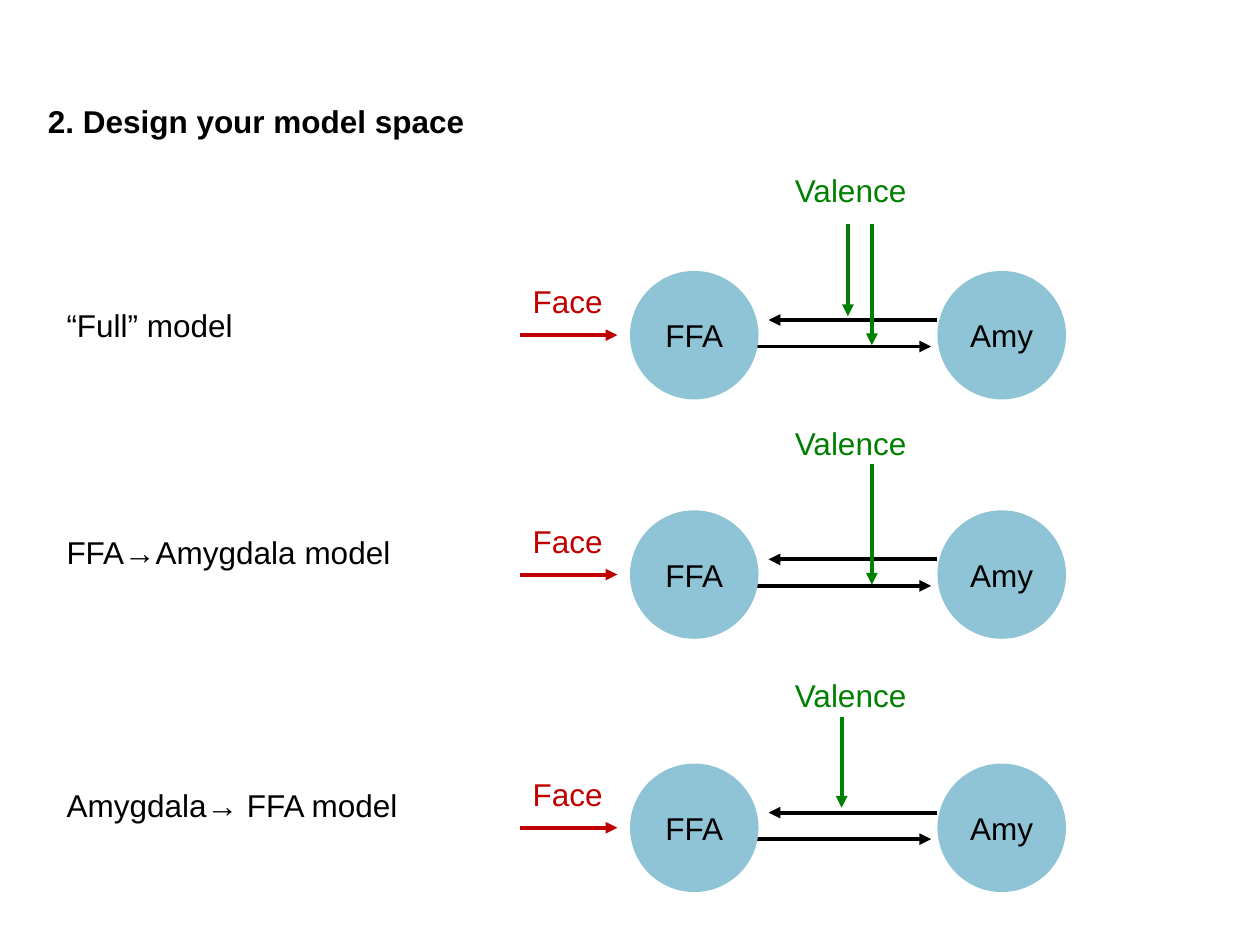
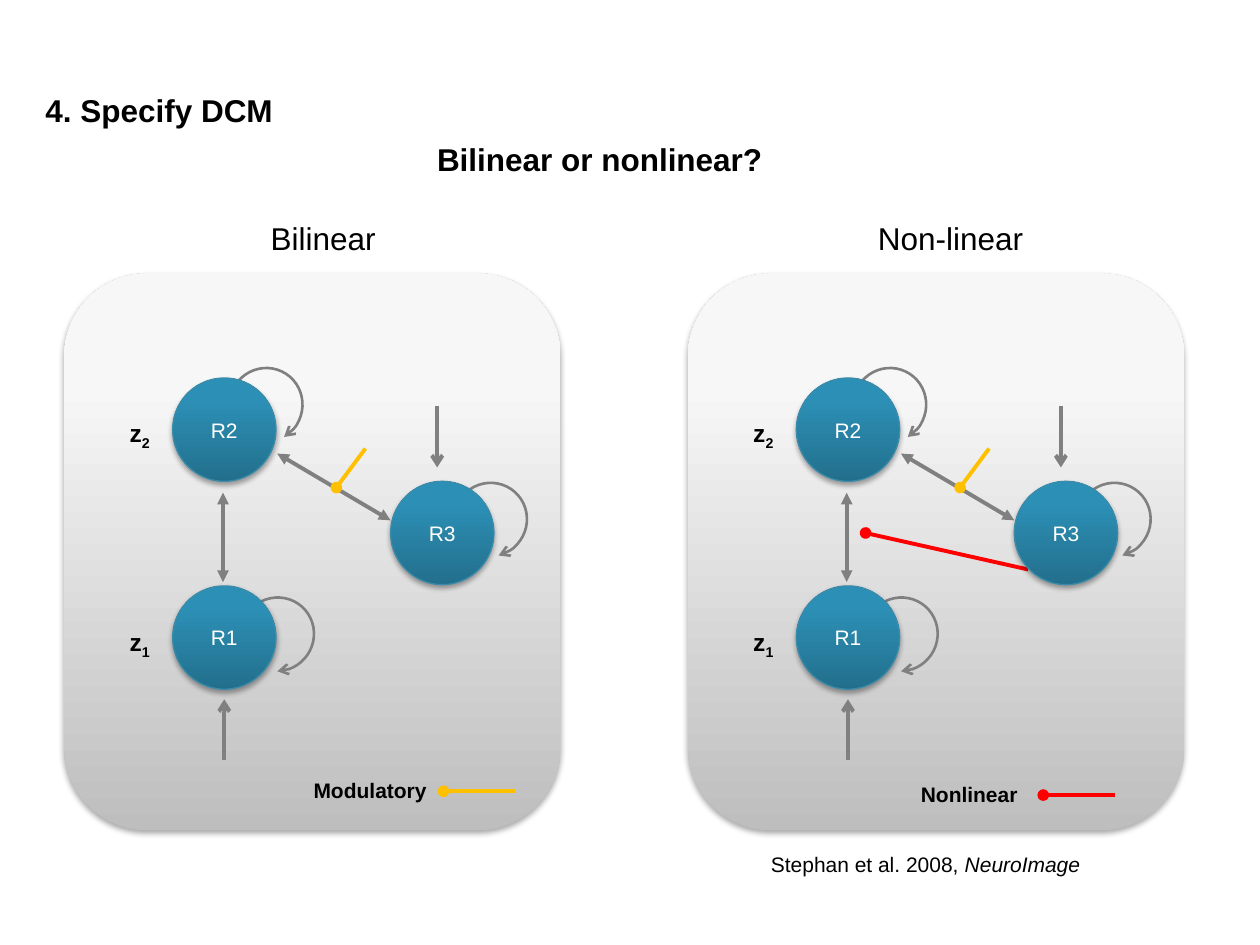
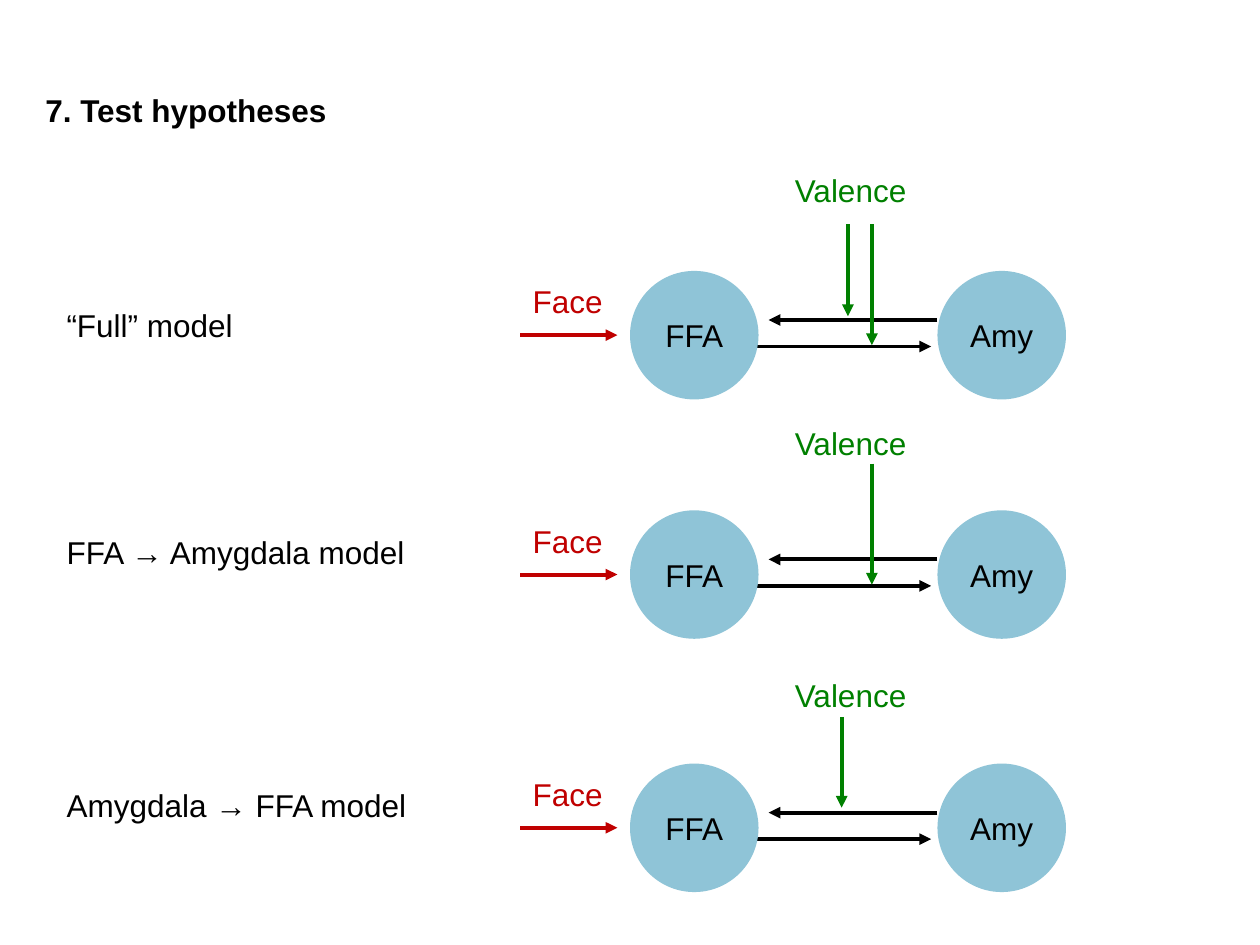
from copy import deepcopy
from dataclasses import dataclass

from pptx import Presentation
from pptx.dml.color import RGBColor
from pptx.enum.shapes import MSO_CONNECTOR, MSO_SHAPE
from pptx.enum.text import MSO_ANCHOR, MSO_AUTO_SIZE, PP_ALIGN
from pptx.oxml import parse_xml
from pptx.oxml.ns import nsdecls, qn
from pptx.util import Inches, Pt

STRAIGHT = MSO_CONNECTOR.STRAIGHT
OVAL, ARC, ROUND = MSO_SHAPE.OVAL, MSO_SHAPE.ARC, MSO_SHAPE.ROUNDED_RECTANGLE
TOP, MIDDLE = MSO_ANCHOR.TOP, MSO_ANCHOR.MIDDLE
LEFT, CENTER = PP_ALIGN.LEFT, PP_ALIGN.CENTER
FIT = MSO_AUTO_SIZE.SHAPE_TO_FIT_TEXT


@dataclass(frozen=True)
class Theme:
    font: str = "Arial"
    head: int = 18
    mid: int = 14
    small: int = 12
    thick: float = 2.25
    thin: float = 1.5
    edge: float = 0.75
    black: str = "000000"
    white: str = "FFFFFF"
    red: str = "C00000"
    green: str = "008000"
    pale: str = "8FC4D7"
    gray: str = "808080"
    gold: str = "FFC000"
    bright: str = "FF0000"
    rim: str = "3A8BAA"
    ball: tuple = ("226F8C", "2C90B6", "2A92B9")
    card: tuple = ("BEBEBE", "F7F7F7", "F8F8F8")


T = Theme()
HIGH = {T.head: 0.4, T.mid: 0.34, T.small: 0.3}


def color(code):
    return RGBColor.from_string(code)


def add_run(para, words, size, ink=T.black, bold=False, italic=False, base=0):
    run = para.add_run()
    run.text = words
    font = run.font
    font.name, font.size = T.font, Pt(size)
    font.bold, font.italic = bold, italic
    font.color.rgb = color(ink)
    if base:
        run._r.get_or_add_rPr().set("baseline", str(base * 1000))


def add_text(area, x, y, wide, words, size=T.head, wrap=False, **style):
    box = area.add_textbox(Inches(x), Inches(y), Inches(wide), Inches(HIGH[size]))
    frame = box.text_frame
    frame.word_wrap = wrap
    frame.auto_size = FIT
    para = frame.paragraphs[0]
    add_run(para, words, size, **style)
    return para


def add_title(slide, x, y, wide, words):
    title = slide.shapes.title
    title.left, title.top = Inches(x), Inches(y)
    title.width, title.height = Inches(wide), Inches(HIGH[T.head])
    frame = title.text_frame
    frame.vertical_anchor = TOP
    frame.auto_size = FIT
    para = frame.paragraphs[0]
    para.alignment = LEFT
    add_run(para, words, T.head, bold=True)


def set_line(shape, ink, width, head=None, tail=None):
    shape.line.width = Pt(width)
    shape.line.color.rgb = color(ink)
    edge = shape._element.spPr.find(qn("a:ln"))
    for tag, kind in (("headEnd", head), ("tailEnd", tail)):
        if kind:
            edge.append(parse_xml(f'<a:{tag} {nsdecls("a")} type="{kind}"/>'))


def add_line(area, start, end, ink, head=None, tail="triangle"):
    line = area.add_connector(STRAIGHT, *map(Inches, (*start, *end)))
    set_line(line, ink, T.thick, head, tail)
    line._element.spPr.append(parse_xml(f'<a:effectLst {nsdecls("a")}/>'))


def add_form(area, kind, x, y, wide, high):
    shape = area.add_shape(kind, *map(Inches, (x, y, wide, high)))
    shape.shadow.inherit = False
    shape.line.fill.background()
    return shape


def add_label(shape, words, size, ink):
    frame = shape.text_frame
    frame.vertical_anchor = MIDDLE
    para = frame.paragraphs[0]
    para.alignment = CENTER
    add_run(para, words, size, ink)


def set_glow(shape, tones):
    fill = shape.fill
    fill.gradient()
    fill.gradient_angle = 90
    stops = shape._element.spPr.find(".//" + qn("a:gsLst"))
    stops.append(deepcopy(stops[-1]))
    for stop, tone, place in zip(fill.gradient_stops, tones, (0, 0.8, 1)):
        stop.color.rgb = color(tone)
        stop.position = place
    shape._element.spPr.find(qn("a:effectLst")).append(parse_xml(
        f'<a:outerShdw {nsdecls("a")} blurRad="{Pt(3.1)}" dist="{Pt(1.8)}" '
        'dir="5400000" rotWithShape="0"><a:srgbClr val="000000">'
        '<a:alpha val="35000"/></a:srgbClr></a:outerShdw>'))


def add_model(area, x, y, name, wide, drop, lift, inputs):
    add_text(area, x, y + drop, wide, name)
    add_line(area, (x + 5.44, y + 0.6), (x + 6.96, y + 0.6), T.black)
    for left, label in ((4.57, "FFA"), (7.01, "Amy")):
        node = add_form(area, OVAL, x + left, y, 1.02, 1.02)
        node.fill.solid()
        node.fill.fore_color.rgb = color(T.pale)
        add_label(node, label, T.head, T.black)
    add_line(area, (x + 3.7, y + 0.51), (x + 4.47, y + 0.51), T.red)
    add_text(area, x + 3.7, y + 0.04, 0.76, "Face", ink=T.red)
    add_text(area, x + 5.78, y - lift, 1.09, "Valence", ink=T.green)
    add_line(area, (x + 7.01, y + 0.39), (x + 5.67, y + 0.39), T.black)
    for left, end in inputs:
        add_line(area, (x + left, y - 0.37), (x + left, y + end), T.green)


def add_space(slide, names):
    rows = (
        (2.15, 0.23, 0.84, ((6.3, 0.36), (6.49, 0.59))),
        (4.05, 0.13, 0.73, ((6.49, 0.59),)),
        (6.06, 0.13, 0.74, ((6.25, 0.35),)),
    )
    for (y, drop, lift, inputs), (name, wide) in zip(rows, names):
        add_model(slide.shapes, 0.43, y, name, wide, drop, lift, inputs)


def add_ball(area, x, y, name):
    ball = add_form(area, OVAL, x, y, 0.82, 0.82)
    set_glow(ball, T.ball)
    set_line(ball, T.rim, T.edge)
    add_label(ball, name, T.small, T.white)


def add_loop(area, x, y, turn, end):
    loop = add_form(area, ARC, x, y, 0.58, 0.59)
    loop.rotation = turn
    loop.adjustments[0], loop.adjustments[1] = 116.19, end
    loop.fill.background()
    set_line(loop, T.gray, T.thin, tail="arrow")


def add_net(area, x, y, name, key, cross=False):
    def at(left, top):
        return x + left, y + top

    card = add_form(area, ROUND, x, y, 3.94, 4.42)
    set_glow(card, T.card)
    left, wide = name[1:]
    add_text(area, *at(left, -0.48), wide, name[0])
    for left, top, turn, end in (
            (1.31, 0.75, 25.3, 21), (1.4, 2.57, 41.7, 28.8), (3.09, 1.66, 41.7, 21)):
        add_loop(area, *at(left, top), turn, end)
    for start, end in (((1.26, 2.45), (1.26, 1.74)), ((1.69, 1.43), (2.59, 1.96))):
        add_line(area, at(*start), at(*end), T.gray, head="triangle")
    for start, end in (((1.27, 3.86), (1.27, 3.38)), ((2.96, 1.05), (2.96, 1.54))):
        add_line(area, at(*start), at(*end), T.gray, tail="arrow")
    for mark, top in (("1", 2.76), ("2", 1.1)):
        para = add_text(area, *at(0.42, top), 0.37, "z", T.mid, bold=True)
        add_run(para, mark, T.mid, bold=True, base=-25)
    add_line(area, at(2.39, 1.39), at(2.16, 1.7), T.gold, tail="oval")
    if cross:
        add_line(area, at(2.7, 2.35), at(1.41, 2.06), T.bright, tail="oval")
    for label, left, top in (("R1", 0.86, 2.48), ("R2", 0.86, 0.83), ("R3", 2.59, 1.65)):
        add_ball(area, *at(left, top), label)
    label, left, top, wide, end, ink = key
    add_text(area, *at(left, top), wide, label, T.small, bold=True)
    add_line(area, at(end + 0.57, top + 0.16), at(end, top + 0.16), ink, tail="oval")


def add_choice(slide):
    area = slide.shapes
    add_text(area, 3.37, 1.06, 2.81, "Bilinear or nonlinear?", bold=True)
    add_net(area, 0.51, 2.17, ("Bilinear", 1.54, 1.04),
            ("Modulatory", 1.88, 3.95, 1.11, 3.01, T.gold))
    group = area.add_group_shape().shapes
    add_net(group, 5.46, 2.17, ("Non-linear", 1.41, 1.37),
            ("Nonlinear", 1.75, 3.98, 0.98, 2.82, T.bright), cross=True)
    para = add_text(group, 6.02, 6.71, 3.22, "Stephan et al. 2008, ", T.small, wrap=True)
    add_run(para, "NeuroImage", T.small, italic=True)


def main():
    deck = Presentation()
    deck.slide_width, deck.slide_height = Inches(10), Inches(7.5)
    plain = deck.slide_layouts[5]
    design, choice, test = (deck.slides.add_slide(plain) for _ in range(3))
    add_title(design, 0.28, 0.76, 5.51, "2. Design your model space")
    add_space(design, (("“Full” model", 1.53), ("FFA→Amygdala model", 2.8),
                       ("Amygdala→ FFA model", 2.85)))
    add_title(choice, 0.26, 0.67, 3.24, "4. Specify DCM")
    add_choice(choice)
    add_title(test, 0.26, 0.67, 7.81, "7. Test hypotheses")
    add_space(test, (("“Full” model", 1.53), ("FFA → Amygdala model", 2.91),
                     ("Amygdala → FFA model", 2.92)))
    deck.save("out.pptx")


if __name__ == "__main__":
    main()
